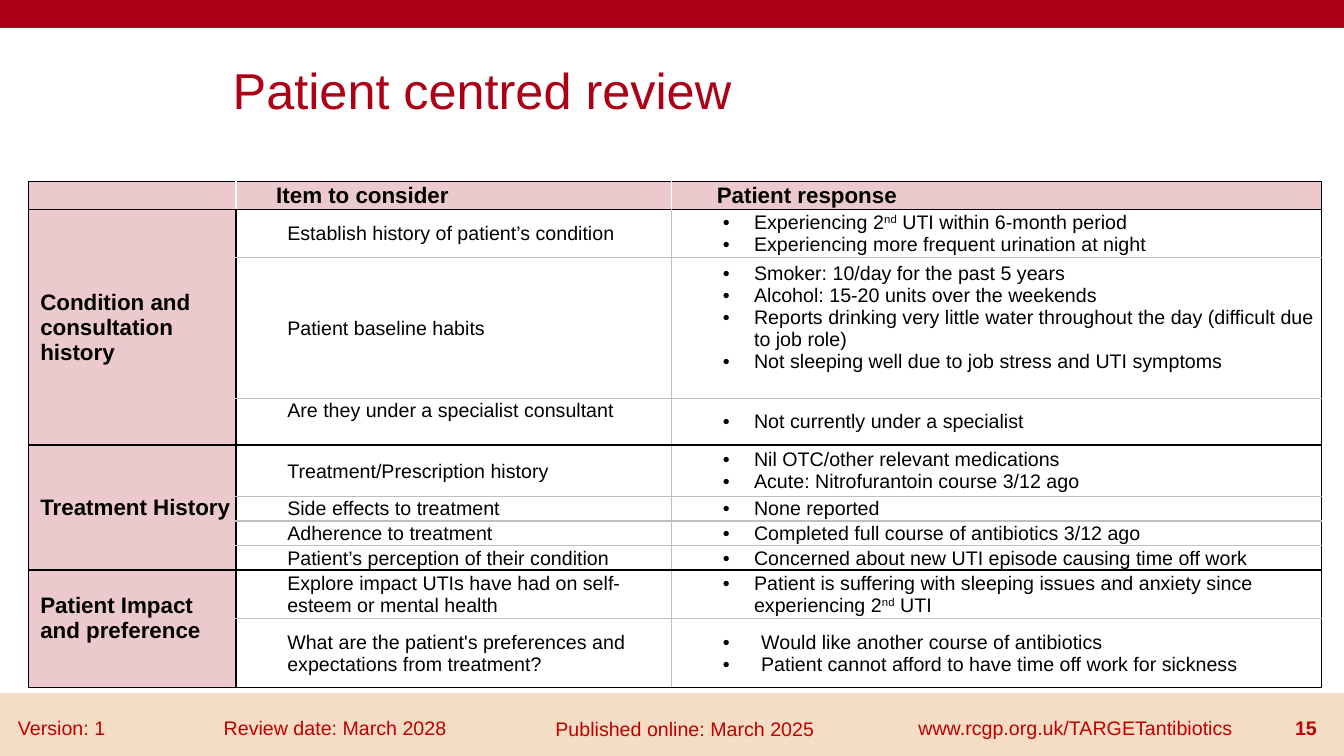
from dataclasses import dataclass

from lxml.etree import SubElement
from pptx import Presentation
from pptx.dml.color import RGBColor
from pptx.enum.shapes import MSO_SHAPE
from pptx.enum.text import MSO_ANCHOR, PP_ALIGN
from pptx.oxml.ns import qn
from pptx.util import Inches, Pt


@dataclass(frozen=True)
class Theme:
    font: str = "Arial"
    red: str = "AD0016"
    footer_red: str = "C00000"
    sand: str = "F4DDC4"
    pink: str = "ECC9CD"
    white: str = "FFFFFF"
    black: str = "000000"
    grey: str = "BFBFBF"
    title_size: int = 36
    heading_size: int = 16
    body_size: int = 14


@dataclass(frozen=True)
class Label:
    text: str
    left: float
    top: float
    width: float
    height: float = 0.4
    bold: bool = False
    align: PP_ALIGN = PP_ALIGN.LEFT


@dataclass(frozen=True)
class Item:
    question: str
    responses: tuple[str, ...]
    height: float
    question_drop: float = 0
    response_drop: float = 0
    bullet_margin: float = 0.81
    bullet_hang: float = 0.31


@dataclass(frozen=True)
class Group:
    name: str
    items: tuple[Item, ...]
    drop: float = 0


THEME = Theme()
INSET = 0.01
LINE = 0.22  # room left free under text that sits above the middle
HEADER_HEIGHT = 0.26
COLUMN_WIDTHS = (2.06, 4.32, 6.45)
HEADINGS = (("", 0), ("Item to consider", 0.39), ("Patient response", 0.44))

BANDS = ((6.88, 0.62, THEME.sand), (-0.01, 0.28, THEME.red))
FOOTERS = (
    Label("Version: 1", 0.08, 7.05, 1.16),
    Label("Review date: March 2028", 2.12, 7.05, 2.78),
    Label("Published online: March 2025", 5.41, 7.06, 2.92),
    Label("www.rcgp.org.uk/TARGETantibiotics", 9.01, 7.05, 3.65),
    Label("15", 12.58, 7.05, 0.58, bold=True, align=PP_ALIGN.RIGHT),
)
TITLE = Label("Patient centred review", 2.21, 0.16, 10.62, 1.45)

# Text between carets is superscript.
GROUPS = (
    Group("Condition and consultation history", (
        Item("Establish history of patient’s condition",
             ("Experiencing 2^nd^ UTI within 6-month period",
              "Experiencing more frequent urination at night"), 0.46),
        Item("Patient baseline habits",
             ("Smoker: 10/day for the past 5 years",
              "Alcohol: 15-20 units over the weekends",
              "Reports drinking very little water throughout the day (difficult due to job role)",
              "Not sleeping well due to job stress and UTI symptoms"),
             1.36, response_drop=LINE),
        Item("Are they under a specialist consultant",
             ("Not currently under a specialist",), 0.46, question_drop=LINE),
    )),
    Group("Treatment History", (
        Item("Treatment/Prescription history",
             ("Nil OTC/other relevant medications",
              "Acute: Nitrofurantoin course 3/12 ago"), 0.51),
        Item("Side effects to treatment", ("None reported",), 0.23),
        Item("Adherence to treatment",
             ("Completed full course of antibiotics 3/12 ago",), 0.23),
        Item("Patient’s perception of their condition",
             ("Concerned about new UTI episode causing time off work",), 0.23),
    )),
    Group("Patient Impact and preference", (
        Item("Explore impact UTIs have had on self-esteem or mental health",
             ("Patient is suffering with sleeping issues and anxiety since "
              "experiencing 2^nd^ UTI",), 0.46),
        Item("What are the patient's preferences and expectations from treatment?",
             ("Would like another course of antibiotics",
              "Patient cannot afford to have time off work for sickness"),
             0.69, bullet_margin=0.88, bullet_hang=0.38),
    ), drop=LINE),
)


def format_span(span, size: int, color: str, bold: bool = False) -> None:
    span.font.name = THEME.font
    span.font.size = Pt(size)
    span.font.bold = bold
    span.font.color.rgb = RGBColor.from_string(color)


def add_band(page, top: float, height: float, color: str, width: int) -> None:
    band = page.shapes.add_shape(MSO_SHAPE.RECTANGLE, 0, Inches(top), width, Inches(height))
    band.shadow.inherit = False
    band.fill.solid()
    band.fill.fore_color.rgb = band.line.color.rgb = RGBColor.from_string(color)
    band.line.width = Pt(1)


def add_label(page, label: Label, size: int, color: str, anchor=MSO_ANCHOR.TOP) -> None:
    box = page.shapes.add_textbox(Inches(label.left), Inches(label.top),
                                  Inches(label.width), Inches(label.height))
    frame = box.text_frame
    frame.word_wrap = True
    frame.vertical_anchor = anchor
    frame.text = label.text
    para = frame.paragraphs[0]
    para.alignment = label.align
    format_span(para.runs[0], size, color, label.bold)


def set_borders(cell, left: str, right: str, top: str, bottom: str) -> None:
    properties = cell._tc.get_or_add_tcPr()
    sides = (("a:lnL", left), ("a:lnR", right), ("a:lnT", top), ("a:lnB", bottom))
    for position, (tag, color) in enumerate(sides):
        line = SubElement(properties, qn(tag), w=str(Pt(1)))
        properties.insert(position, line)
        SubElement(SubElement(line, qn("a:solidFill")), qn("a:srgbClr"), val=color)


def fill_cell(cell, lines: tuple[str, ...], color: str, size: int, bold: bool = False,
              margin: float = 0, hang: float = 0, drop: float = 0) -> None:
    """Write one paragraph per line; a hang gives each one a bullet."""
    cell.fill.solid()
    cell.fill.fore_color.rgb = RGBColor.from_string(color)
    cell.vertical_anchor = MSO_ANCHOR.MIDDLE
    cell.margin_left = cell.margin_right = cell.margin_top = Inches(INSET)
    cell.margin_bottom = Inches(drop)
    frame = cell.text_frame
    frame.text = "\n".join(lines)
    for para, line in zip(frame.paragraphs, lines):
        properties = para._p.get_or_add_pPr()
        properties.set("marL", str(Inches(margin)))
        properties.set("indent", str(-Inches(hang)))
        if hang:
            SubElement(properties, qn("a:buFont"), typeface=THEME.font)
            SubElement(properties, qn("a:buChar"), char="•")
        if not line:
            SubElement(para._p, qn("a:endParaRPr"), sz=str(size * 100))
            continue
        para.clear()
        for position, part in enumerate(line.split("^")):
            span = para.add_run()
            span.text = part
            format_span(span, size, THEME.black, bold)
            if position % 2:
                span._r.get_or_add_rPr().set("baseline", "30000")


def add_review_table(page) -> None:
    heights = [HEADER_HEIGHT] + [item.height for group in GROUPS for item in group.items]
    table = page.shapes.add_table(len(heights), len(COLUMN_WIDTHS), Inches(0.28), Inches(1.8),
                                  Inches(sum(COLUMN_WIDTHS)), Inches(sum(heights))).table
    table.first_row = table.horz_banding = False
    for column, width in zip(table.columns, COLUMN_WIDTHS):
        column.width = Inches(width)
    for row, height in zip(table.rows, heights):
        row.height = Inches(height)

    black, white, grey = THEME.black, THEME.white, THEME.grey
    header_edges = (black, white, white, black)
    for column, (heading, margin) in enumerate(HEADINGS):
        cell = table.cell(0, column)
        fill_cell(cell, (heading,), THEME.pink, THEME.heading_size, True, margin)
        set_borders(cell, *header_edges[column:column + 2], black, black)

    first = 1
    for group in GROUPS:
        last = first + len(group.items) - 1
        name_cell = table.cell(first, 0)
        name_cell.merge(table.cell(last, 0))
        fill_cell(name_cell, (group.name,), THEME.pink, THEME.heading_size, True, 0.11,
                  drop=group.drop)
        for row, item in enumerate(group.items, first):
            question, response = table.cell(row, 1), table.cell(row, 2)
            fill_cell(question, (item.question,), white, THEME.body_size, margin=0.5,
                      drop=item.question_drop)
            fill_cell(response, item.responses, white, THEME.body_size,
                      margin=item.bullet_margin, hang=item.bullet_hang, drop=item.response_drop)
            top = black if row == first else grey
            bottom = black if row == last else grey
            set_borders(table.cell(row, 0), black, black, black, black)
            set_borders(question, black, grey, top, bottom)
            set_borders(response, grey, black, top, bottom)
        first = last + 1


def main() -> None:
    deck = Presentation()
    deck.slide_width, deck.slide_height = Inches(13.33), Inches(7.5)
    page = deck.slides.add_slide(deck.slide_layouts[6])
    for top, height, color in BANDS:
        add_band(page, top, height, color, deck.slide_width)
    for footer in FOOTERS:
        add_label(page, footer, THEME.body_size, THEME.footer_red)
    add_label(page, TITLE, THEME.title_size, THEME.red, MSO_ANCHOR.MIDDLE)
    add_review_table(page)
    deck.save("out.pptx")


if __name__ == "__main__":
    main()
